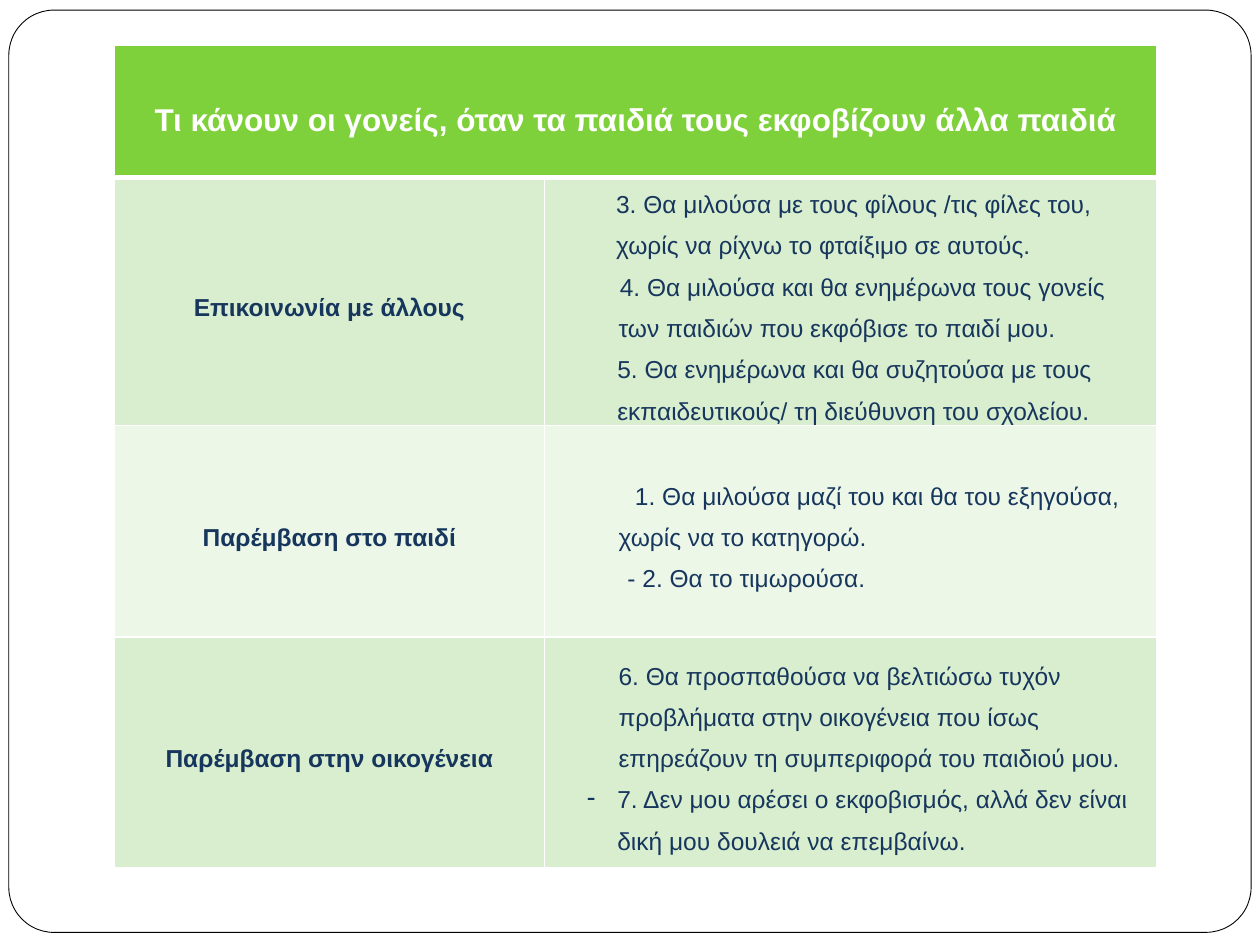
from lxml import etree
from pptx import Presentation
from pptx import util as u
from pptx.dml.color import RGBColor
from pptx.enum import shapes, text
from pptx.oxml import ns

WIDTH, HEIGHT = 10, 7.5
FONT = "Arial"
GREEN, BAND, PALE, NAVY, WHITE = "7FD13B", "D8EECE", "ECF7E8", "17365D", "FFFFFF"
COLUMNS = (3.41, 4.86)
ROWS = (1.05, 1.96, 1.68, 1.83)
HEADING = "Τι κάνουν οι γονείς, όταν τα παιδιά τους εκφοβίζουν άλλα παιδιά"
GROUPS = [
    ("Επικοινωνία με άλλους", [
        ("3. Θα μιλούσα με τους φίλους /τις φίλες του, χωρίς να ρίχνω το φταίξιμο σε αυτούς.", 0.5, 0, None),
        ("4. Θα μιλούσα και θα ενημέρωνα τους γονείς των παιδιών που εκφόβισε το παιδί μου.", 0.52, 0.01, None),
        ("5. Θα ενημέρωνα και θα συζητούσα με τους εκπαιδευτικούς/ τη διεύθυνση του σχολείου.", 0.51, 0, None),
    ]),
    ("Παρέμβαση στο παιδί", [
        ("1. Θα μιλούσα μαζί του και θα του εξηγούσα, χωρίς να το κατηγορώ.", 0.52, 0.13, None),
        ("- 2. Θα το τιμωρούσα.", 0.52, 0.07, None),
    ]),
    ("Παρέμβαση στην οικογένεια", [
        ("6. Θα προσπαθούσα να βελτιώσω τυχόν προβλήματα στην οικογένεια που ίσως "
         "επηρεάζουν τη συμπεριφορά του παιδιού μου.", 0.52, 0, None),
        ("7. Δεν μου αρέσει ο εκφοβισμός, αλλά δεν είναι δική μου δουλειά να επεμβαίνω.", 0.51, -0.24, "-"),
    ]),
]


def rgb(value):
    """Turn a hex string into a colour."""
    return RGBColor.from_string(value)


def set_borders(cell, bottom=1, top=1):
    """Give a cell white borders, with widths in points."""
    tc_pr = cell._tc.get_or_add_tcPr()
    widths = (("lnL", 1), ("lnR", 1), ("lnT", top), ("lnB", bottom))
    for place, (tag, width) in enumerate(widths):
        line = etree.Element(ns.qn(f"a:{tag}"), w=str(u.Pt(width)))
        fill = etree.SubElement(line, ns.qn("a:solidFill"))
        etree.SubElement(fill, ns.qn("a:srgbClr"), val=WHITE)
        tc_pr.insert(place, line)


def format_cell(cell, fill, **borders):
    """Set the fill, margins, anchor and borders of a cell."""
    cell.fill.solid()
    cell.fill.fore_color.rgb = rgb(fill)
    cell.margin_left = cell.margin_right = u.Inches(0.07)
    cell.margin_top = cell.margin_bottom = 0
    cell.vertical_anchor = text.MSO_ANCHOR.MIDDLE
    set_borders(cell, **borders)


def format_paragraph(p, words, size=14, color=NAVY, bold=False, align=text.PP_ALIGN.LEFT,
                     margin=0, indent=0, bullet=None):
    """Write one paragraph with its indents, bullet and font."""
    p.text = words
    p.alignment = align
    p.line_spacing = 1.5
    p_pr = p._p.get_or_add_pPr()
    p_pr.set("marL", str(u.Inches(margin)))
    p_pr.set("indent", str(u.Inches(indent)))
    if bullet:
        etree.SubElement(p_pr, ns.qn("a:buChar"), char=bullet)
    p.font.name = FONT
    p.font.size = u.Pt(size)
    p.font.bold = bold
    p.font.color.rgb = rgb(color)


def add_frame(s, left, top, width, height):
    """Draw the rounded outline around the slide."""
    sp = s.shapes.add_shape(shapes.MSO_SHAPE.ROUNDED_RECTANGLE,
                            *map(u.Inches, (left, top, width, height)))
    sp.adjustments[0] = 0.049
    sp.shadow.inherit = False
    sp.fill.solid()
    sp.fill.fore_color.rgb = rgb(WHITE)
    sp.line.color.rgb = rgb("000000")
    sp.line.width = u.Pt(0.5)


def add_answers(s, left, top):
    """Place the table of parents' answers from its top left corner."""
    box = map(u.Inches, (left, top, sum(COLUMNS), sum(ROWS)))
    table = s.shapes.add_table(len(ROWS), len(COLUMNS), *box).table
    table.first_row = table.horz_banding = False
    for column, width in zip(table.columns, COLUMNS):
        column.width = u.Inches(width)
    for row, height in zip(table.rows, ROWS):
        row.height = u.Inches(height)

    for cell in table.rows[0].cells:
        format_cell(cell, GREEN, bottom=3)
    heading = table.cell(0, 0)
    heading.merge(table.cell(0, 1))
    format_paragraph(heading.text_frame.paragraphs[0], HEADING, 18, WHITE, True,
                     text.PP_ALIGN.CENTER)

    for i, (group, answers) in enumerate(GROUPS, 1):
        label, body = table.cell(i, 0), table.cell(i, 1)
        for cell in (label, body):
            format_cell(cell, BAND if i % 2 else PALE, top=3 if i == 1 else 1)
        format_paragraph(label.text_frame.paragraphs[0], group, bold=True,
                         align=text.PP_ALIGN.CENTER)
        tf = body.text_frame
        for j, (words, margin, indent, bullet) in enumerate(answers):
            p = tf.add_paragraph() if j else tf.paragraphs[0]
            format_paragraph(p, words, margin=margin, indent=indent, bullet=bullet)


def main():
    """Build and save the slide."""
    prs = Presentation()
    prs.slide_width, prs.slide_height = u.Inches(WIDTH), u.Inches(HEIGHT)
    s = prs.slides.add_slide(prs.slide_layouts[6])
    add_frame(s, 0.07, 0.08, 9.86, 7.32)
    add_answers(s, 0.91, 0.36)
    prs.save("out.pptx")


if __name__ == "__main__":
    main()
